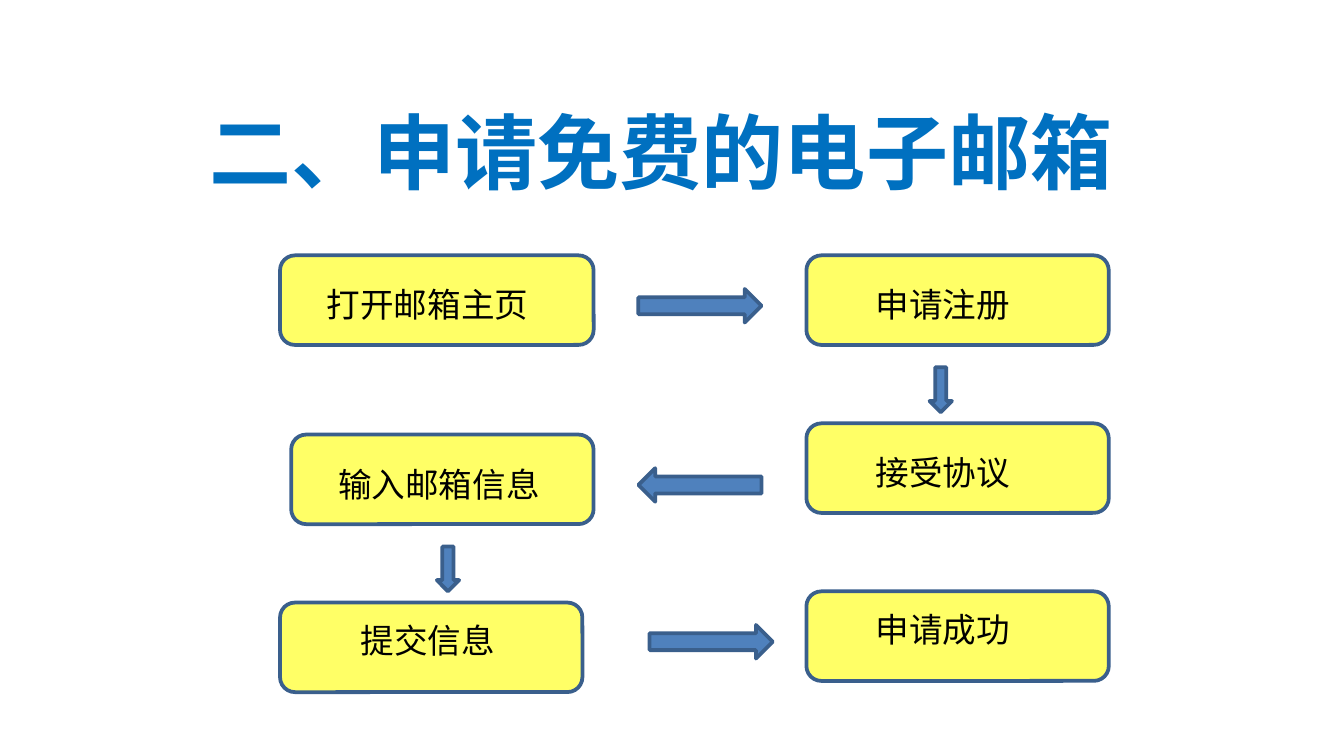
from pptx import Presentation
from pptx.dml.color import RGBColor
from pptx.enum.shapes import MSO_SHAPE
from pptx.enum.text import MSO_ANCHOR, MSO_AUTO_SIZE, PP_ALIGN
from pptx.util import Inches, Pt

TITLE_BLUE = RGBColor(0x00, 0x70, 0xC0)
STEP_YELLOW = RGBColor(0xFF, 0xFF, 0x66)
ARROW_BLUE = RGBColor(0x4F, 0x81, 0xBD)
OUTLINE = RGBColor(0x3A, 0x5F, 0x8C)
BLACK = RGBColor(0, 0, 0)

ROUNDED = MSO_SHAPE.ROUNDED_RECTANGLE
RIGHT = MSO_SHAPE.RIGHT_ARROW
DOWN = MSO_SHAPE.DOWN_ARROW

# A 16:9 slide
SLIDE_WIDTH = Inches(10)
SLIDE_HEIGHT = SLIDE_WIDTH * 9 // 16

# Grid: twelve cells to the inch; rows are counted from the top of the chart
CELL = Inches(1) // 12
CHART_TOP = Inches(1.9)
STEP_ROWS = 8
LABEL_HEIGHT = Inches(0.4)

# Step: text, column, row, columns wide, label offset (columns, rows), label width
STEPS = [
    ("打开邮箱主页", 25, 0, 28, (3, 2), 23),
    ("申请注册", 72, 0, 27, (5, 2), 17),
    ("输入邮箱信息", 26, 16, 27, (3, 2), 22),
    ("接受协议", 72, 15, 27, (5, 2), 22),
    ("提交信息", 25, 31, 27, (6, 1), 22),
    ("申请成功", 72, 30, 27, (5, 1), 18),
]

# Arrow: preset, column, row, columns wide, rows high, rotation
ARROWS = [
    (RIGHT, 57, 3, 11, 3, 0),
    (RIGHT, 58, 33, 11, 3, 0),
    (DOWN, 83, 10, 2, 4, 0),
    (DOWN, 39, 26, 2, 4, 0),
    (RIGHT, 57, 19, 11, 3, 180),
]


def grid_point(column, row):
    return column * CELL, CHART_TOP + row * CELL


def add_run(paragraph, text, font_name, size, color, bold=False):
    run = paragraph.add_run()
    run.text = text
    run.font.name = font_name
    run.font.size = Pt(size)
    run.font.color.rgb = color
    run.font.bold = bold


def add_title(slide, text):
    title = slide.shapes.title
    title.left, title.top = Inches(0.42), Inches(0.65)
    title.width, title.height = Inches(9), Inches(0.94)
    title.text_frame.vertical_anchor = MSO_ANCHOR.MIDDLE
    heading = title.text_frame.paragraphs[0]
    heading.alignment = PP_ALIGN.CENTER
    add_run(heading, text, "Calibri", 44, TITLE_BLUE, bold=True)


def add_outlined(shapes, preset, column, row, columns, rows, fill):
    outlined = shapes.add_shape(
        preset, *grid_point(column, row), columns * CELL, rows * CELL)
    outlined.shadow.inherit = False
    outlined.fill.solid()
    outlined.fill.fore_color.rgb = fill
    outlined.line.color.rgb = OUTLINE
    outlined.line.width = Pt(2)
    return outlined


def add_step(slide, text, column, row, columns, label_offset, label_columns):
    step = slide.shapes.add_group_shape()
    add_outlined(step.shapes, ROUNDED, column, row, columns, STEP_ROWS, STEP_YELLOW)
    across, down = label_offset
    label = step.shapes.add_textbox(
        *grid_point(column + across, row + down), label_columns * CELL, LABEL_HEIGHT)
    label.text_frame.word_wrap = True
    label.text_frame.auto_size = MSO_AUTO_SIZE.SHAPE_TO_FIT_TEXT
    add_run(label.text_frame.paragraphs[0], text, "Arial", 18, BLACK)


def add_arrow(slide, preset, column, row, columns, rows, rotation):
    arrow = add_outlined(slide.shapes, preset, column, row, columns, rows, ARROW_BLUE)
    arrow.rotation = rotation


def main():
    prs = Presentation()
    prs.slide_width, prs.slide_height = SLIDE_WIDTH, SLIDE_HEIGHT
    slide = prs.slides.add_slide(prs.slide_layouts.get_by_name("Title Only"))

    add_title(slide, "二、申请免费的电子邮箱")

    # Registration steps, then the arrows that lead through them
    for step in STEPS:
        add_step(slide, *step)
    for arrow in ARROWS:
        add_arrow(slide, *arrow)

    prs.save("out.pptx")


if __name__ == "__main__":
    main()
